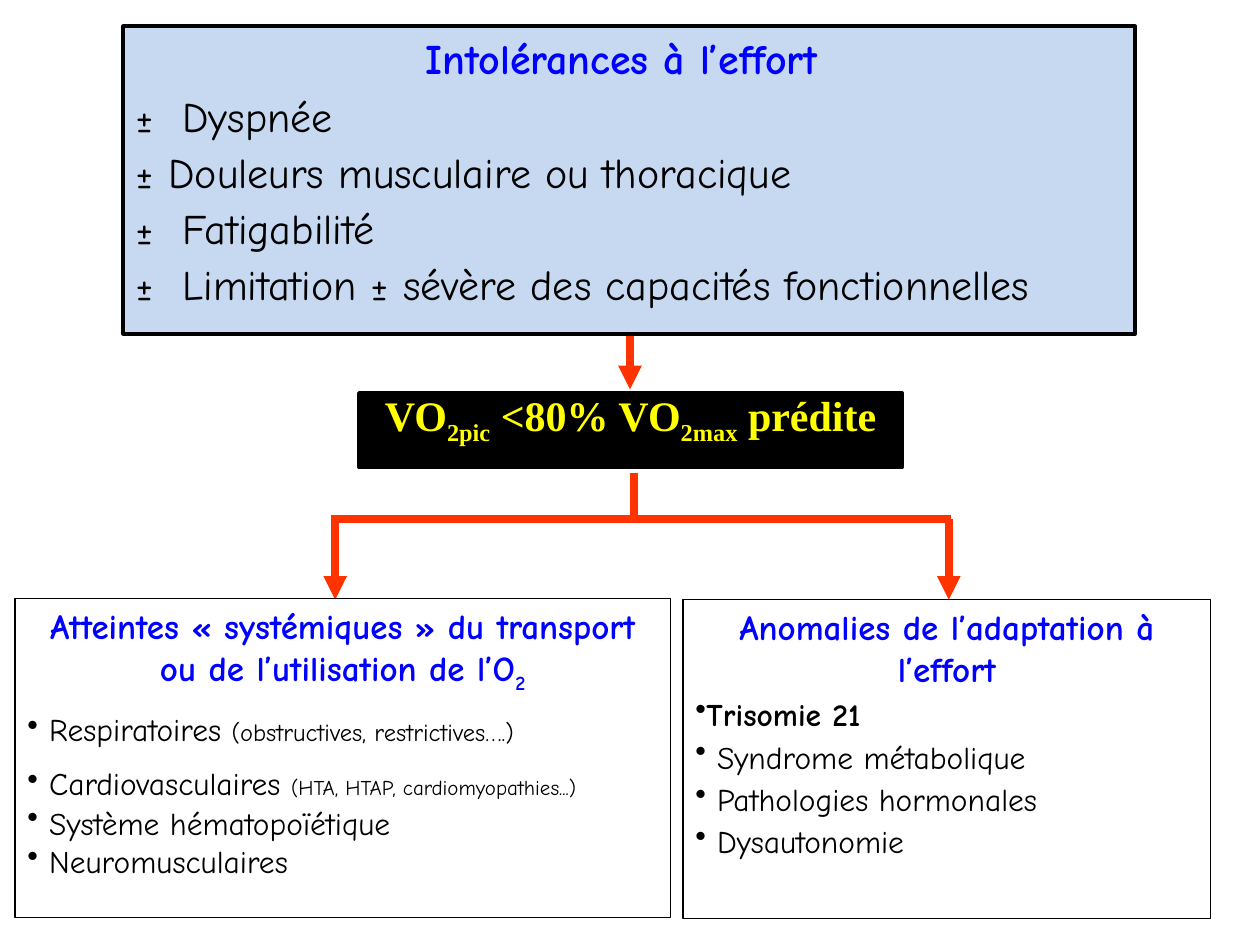
from lxml import etree
from pptx import Presentation
from pptx.dml.color import RGBColor
from pptx.enum.shapes import MSO_CONNECTOR, MSO_SHAPE
from pptx.enum.text import MSO_ANCHOR, PP_ALIGN
from pptx.oxml.ns import qn
from pptx.util import Inches, Pt

RECTANGLE = MSO_SHAPE.RECTANGLE
STRAIGHT = MSO_CONNECTOR.STRAIGHT
TOP = MSO_ANCHOR.TOP
LEFT, CENTER = PP_ALIGN.LEFT, PP_ALIGN.CENTER

COLUMNS, ROWS = 100, 75
BLACK, WHITE, BLUE, YELLOW = "000000", "FFFFFF", "0000FF", "FFFF00"
PALE_BLUE, ORANGE = "C6D9F1", "FF3300"
BODY_FONT, FORMULA_FONT = "Comic Neue", "Times New Roman"


def color(hex_string):
    return RGBColor.from_string(hex_string)


def add_xml(parent, tag, **attributes):
    return etree.SubElement(parent, qn(tag), attributes)


class FlowSlide:
    """Places elements on a grid of COLUMNS by ROWS."""

    def __init__(self, deck):
        self.page = deck.slides.add_slide(deck.slide_layouts[6])
        self.column = deck.slide_width / COLUMNS
        self.row = deck.slide_height / ROWS

    def point(self, column, row):
        return round(column * self.column), round(row * self.row)

    def box(self, left, top, width, height, fill, border):
        box = self.page.shapes.add_shape(
            RECTANGLE, *self.point(left, top), *self.point(width, height))
        box.shadow.inherit = False
        box.fill.solid()
        box.fill.fore_color.rgb = color(fill)
        box.line.color.rgb = color(BLACK)
        box.line.width = Pt(border)
        box.text_frame.word_wrap = True
        box.text_frame.vertical_anchor = TOP
        return box

    def para(self, box, spans, size, ink=BLACK, bold=False, font=BODY_FONT,
             align=LEFT, spacing=None, bullet=False):
        """Add a paragraph of spans: (text, size), where size "sub" is a subscript."""
        frame = box.text_frame
        para = frame.paragraphs[0]
        if para.runs:
            para = frame.add_paragraph()
        para.alignment = align
        para.line_spacing = spacing
        properties = para._p.get_or_add_pPr()
        add_xml(add_xml(properties, "a:spcBef"), "a:spcPct", val="50000")
        if bullet:
            add_xml(properties, "a:buChar", char="•")
        for text, span_size in spans:
            span = para.add_run()
            span.text = text
            span.font.name = font
            span.font.bold = bold
            span.font.color.rgb = color(ink)
            if span_size == "sub":
                span.font.size = Pt(size)
                span.font._element.set("baseline", "-25000")
            else:
                span.font.size = Pt(span_size or size)

    def heading(self, box, spans, size):
        self.para(box, spans, size, BLUE, bold=True, align=CENTER)

    def line(self, start, end, arrow=False):
        line = self.page.shapes.add_connector(
            STRAIGHT, *self.point(*start), *self.point(*end))
        line.line.color.rgb = color(ORANGE)
        line.line.width = Pt(4.5)
        if arrow:
            add_xml(line.line._get_or_add_ln(), "a:tailEnd", type="triangle")
        add_xml(line._element.spPr, "a:effectLst")


def draw_symptoms(slide):
    box = slide.box(9.8, 2.1, 80.3, 24.4, PALE_BLUE, 2.25)
    slide.heading(box, [("Intolérances à l’effort ", None)], 24)
    for symptom in ("±  Dyspnée",
                    "± Douleurs musculaire ou thoracique",
                    "±  Fatigabilité",
                    "±  Limitation ± sévère des capacités fonctionnelles"):
        slide.para(box, [(symptom, None)], 24, spacing=0.7)


def draw_threshold(slide):
    box = slide.box(28.5, 31.2, 43.1, 5.9, BLACK, 2.25)
    formula = [("VO", None), ("2pic", "sub"), (" <80% VO", None),
               ("2max", "sub"), (" prédite", None)]
    slide.para(box, formula, 24, YELLOW, bold=True, font=FORMULA_FONT,
               align=CENTER, spacing=0.7)


def draw_arrows(slide):
    fork, left, right = 41.2, 26.6, 75.3
    slide.line((50, 26.7), (50, 30.9), arrow=True)
    slide.line((50.3, 37.5), (50.3, fork))
    slide.line((left - 0.3, fork), (right + 0.2, fork))
    for column in (left, right):
        slide.line((column, fork), (column, 47.6), arrow=True)


def draw_systemic(slide):
    box = slide.box(1.2, 47.5, 52, 25.3, WHITE, 0.75)
    slide.heading(box, [
        ("Atteintes « systémiques » du transport ou de l’utilisation de l’O", None),
        ("2", "sub")], 20)
    causes = [
        ([(" Respiratoires ", None), ("(obstructives, restrictives….)", 14)], None),
        ([(" Cardiovasculaires ", None), ("(HTA, HTAP, cardiomyopathies...)", 12)], None),
        ([(" Système hématopoïétique", None)], 0.6),
        ([(" Neuromusculaires", None)], 0.6),
    ]
    for spans, spacing in causes:
        slide.para(box, spans, 18, spacing=spacing, bullet=True)


def draw_adaptation(slide):
    box = slide.box(54.2, 47.6, 41.9, 25.3, WHITE, 0.75)
    slide.heading(box, [("Anomalies de l’adaptation à l’effort", None)], 20)
    causes = ("Trisomie 21", " Syndrome métabolique",
              " Pathologies hormonales", " Dysautonomie")
    for cause in causes:
        slide.para(box, [(cause, None)], 18, bold=cause == causes[0],
                   spacing=0.7, bullet=True)


def main():
    deck = Presentation()
    deck.slide_width, deck.slide_height = Inches(10), Inches(7.5)
    slide = FlowSlide(deck)
    for draw in (draw_threshold, draw_symptoms, draw_arrows,
                 draw_systemic, draw_adaptation):
        draw(slide)
    deck.save("out.pptx")


if __name__ == "__main__":
    main()
